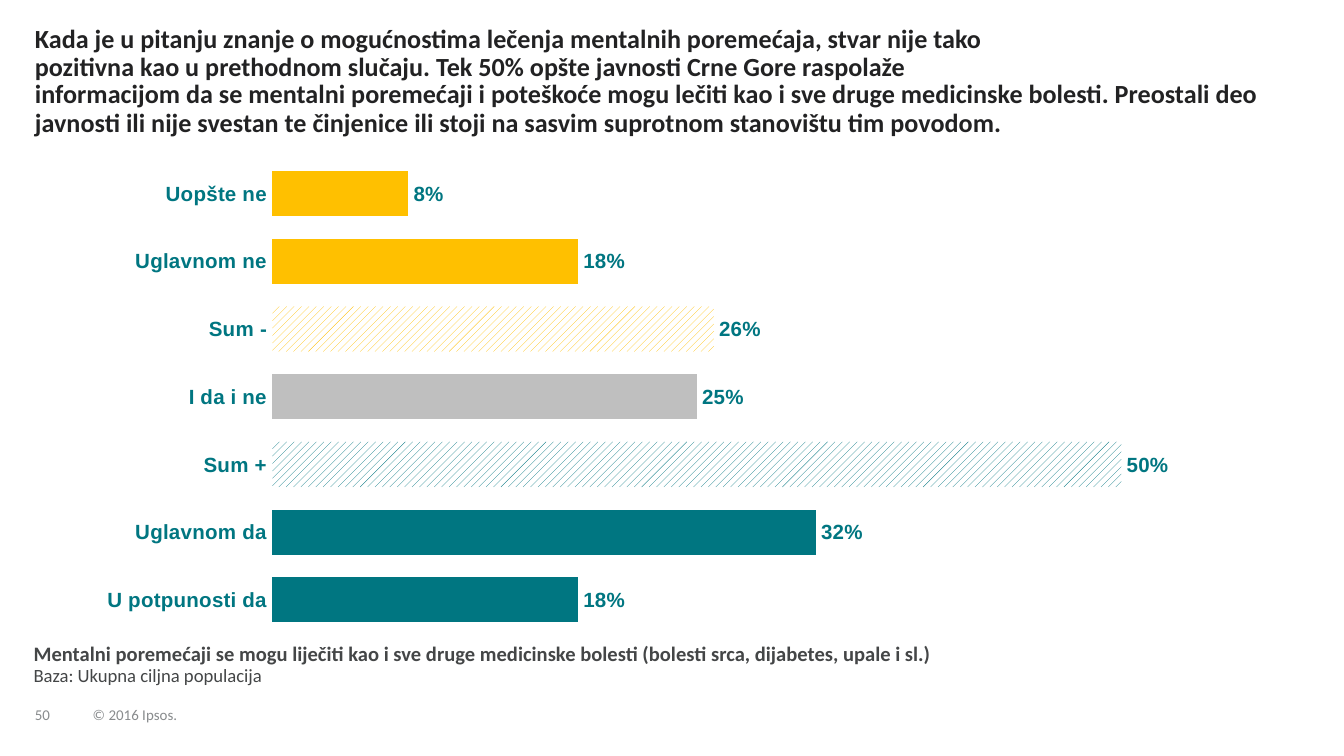
from dataclasses import dataclass
from lxml import etree
from pptx import Presentation
from pptx import util as u
from pptx.chart.data import CategoryChartData
from pptx.dml.color import RGBColor
from pptx.enum import chart as charts, dml, text
from pptx.oxml.ns import qn


@dataclass(frozen=True)
class Theme:
    dark: str = "222223"
    body: str = "444647"
    pale: str = "888B8D"
    teal: str = "007681"
    gold: str = "FFC000"
    gray: str = "BFBFBF"
    white: str = "FFFFFF"
    sans: str = "Calibri"
    plain: str = "Arial"
    head: int = 14
    label: int = 11
    base: int = 10
    foot: int = 8


THEME = Theme()
BARS = [
    ("Uopšte ne", 8, THEME.gold, False),
    ("Uglavnom ne", 18, THEME.gold, False),
    ("Sum -", 26, THEME.gold, True),
    ("I da i ne", 25, THEME.gray, False),
    ("Sum +", 50, THEME.teal, True),
    ("Uglavnom da", 32, THEME.teal, False),
    ("U potpunosti da", 18, THEME.teal, False),
]


def style(font, size, color, bold=False, name=THEME.sans):
    font.name = name
    font.size = u.Pt(size)
    font.bold = bold
    font.color.rgb = RGBColor.from_string(color)


def add_text(slide, box, words, size, color, bold=False, space=0.9,
             anchor=text.MSO_ANCHOR.TOP, wrap=True):
    frame = slide.shapes.add_textbox(*map(u.Inches, box)).text_frame
    frame.margin_left = frame.margin_right = 0
    frame.margin_top = frame.margin_bottom = 0
    frame.word_wrap = wrap
    frame.vertical_anchor = anchor
    para = frame.paragraphs[0]
    para.line_spacing = space
    para.add_run().text = words
    style(para.font, size, color, bold)
    return para


def add_head(slide, box):
    left, top, width, height = box
    half = height / 2
    add_text(slide, (left, top, 7.17, half),
             "Kada je u pitanju znanje o mogućnostima lečenja mentalnih "
             "poremećaja, stvar nije tako pozitivna kao u prethodnom slučaju. "
             "Tek 50% opšte javnosti Crne Gore raspolaže",
             THEME.head, THEME.dark, True)
    add_text(slide, (left, top + half, width, half),
             "informacijom da se mentalni poremećaji i poteškoće mogu lečiti "
             "kao i sve druge medicinske bolesti. Preostali deo javnosti ili "
             "nije svestan te činjenice ili stoji na sasvim suprotnom "
             "stanovištu tim povodom.",
             THEME.head, THEME.dark, True)


def set_plot(chart, **spots):
    area = chart._chartSpace.chart.plotArea
    for old in area.findall(qn("c:layout")):
        area.remove(old)
    layout = etree.Element(qn("c:layout"))
    area.insert(0, layout)
    manual = etree.SubElement(layout, qn("c:manualLayout"))
    modes = {"layoutTarget": "inner", "xMode": "edge", "yMode": "edge"}
    for tag, val in (modes | spots).items():
        etree.SubElement(manual, qn("c:" + tag)).set("val", str(val))


def paint(fill, color, striped):
    if striped:
        fill.patterned()
        fill.pattern = dml.MSO_PATTERN.WIDE_UPWARD_DIAGONAL
        fill.back_color.rgb = RGBColor.from_string(THEME.white)
    else:
        fill.solid()
    fill.fore_color.rgb = RGBColor.from_string(color)


def add_bars(slide, box):
    data = CategoryChartData()
    data.categories = [bar[0] for bar in BARS]
    data.add_series("Series 1", [bar[1] for bar in BARS])
    chart = slide.shapes.add_chart(
        charts.XL_CHART_TYPE.BAR_CLUSTERED, *map(u.Inches, box), data).chart
    chart.has_title = chart.has_legend = False
    style(chart.font, THEME.label, THEME.teal, True, THEME.plain)
    set_plot(chart, x=0.186, y=0.024, w=0.798, h=0.956)

    axis = chart.category_axis
    axis.reverse_order = True
    axis.major_tick_mark = charts.XL_TICK_MARK.NONE
    axis.format.line.fill.background()
    scale = chart.value_axis
    scale.minimum_scale, scale.maximum_scale = 0, 60
    scale.has_major_gridlines = False
    scale.visible = False

    plot = chart.plots[0]
    plot.gap_width = 50
    plot.vary_by_categories = False
    series = plot.series[0]
    series.invert_if_negative = False
    labels = series.data_labels
    labels.show_value = True
    labels.number_format = '0"%"'
    labels.number_format_is_linked = False
    labels.position = charts.XL_LABEL_POSITION.OUTSIDE_END
    style(labels.font, THEME.label, THEME.teal, True, THEME.plain)
    for spot, (_, _, color, striped) in enumerate(BARS):
        paint(series.points[spot].format.fill, color, striped)


def add_note(slide, box):
    para = add_text(slide, box,
                    "Mentalni poremećaji se mogu liječiti kao i sve druge "
                    "medicinske bolesti (bolesti srca, dijabetes, upale i sl.)",
                    THEME.label, THEME.body, space=0.95)
    para.runs[0].font.bold = True
    para.add_line_break()
    base = para.add_run()
    base.text = "Baza: Ukupna ciljna populacija"
    base.font.size = u.Pt(THEME.base)


def add_foot(slide, box):
    left, top, width, height = box
    gap = 0.43
    for start, wide, words in ((left, gap, "50"),
                               (left + gap, width - gap, "© 2016 Ipsos.")):
        add_text(slide, (start, top, wide, height), words, THEME.foot,
                 THEME.pale, space=0.85, anchor=text.MSO_ANCHOR.BOTTOM,
                 wrap=False)


def main():
    deck = Presentation()
    deck.slide_width = u.Inches(10)
    deck.slide_height = u.Inches(10 * 9 / 16)
    slide = deck.slides.add_slide(deck.slide_layouts[6])
    add_head(slide, (0.26, 0.19, 9.5, 0.83))
    add_bars(slide, (0.26, 1.1, 9.5, 3.69))
    add_note(slide, (0.25, 4.78, 9.51, 0.47))
    add_foot(slide, (0.26, 5.2, 1.19, 0.18))
    deck.save("out.pptx")


if __name__ == "__main__":
    main()
